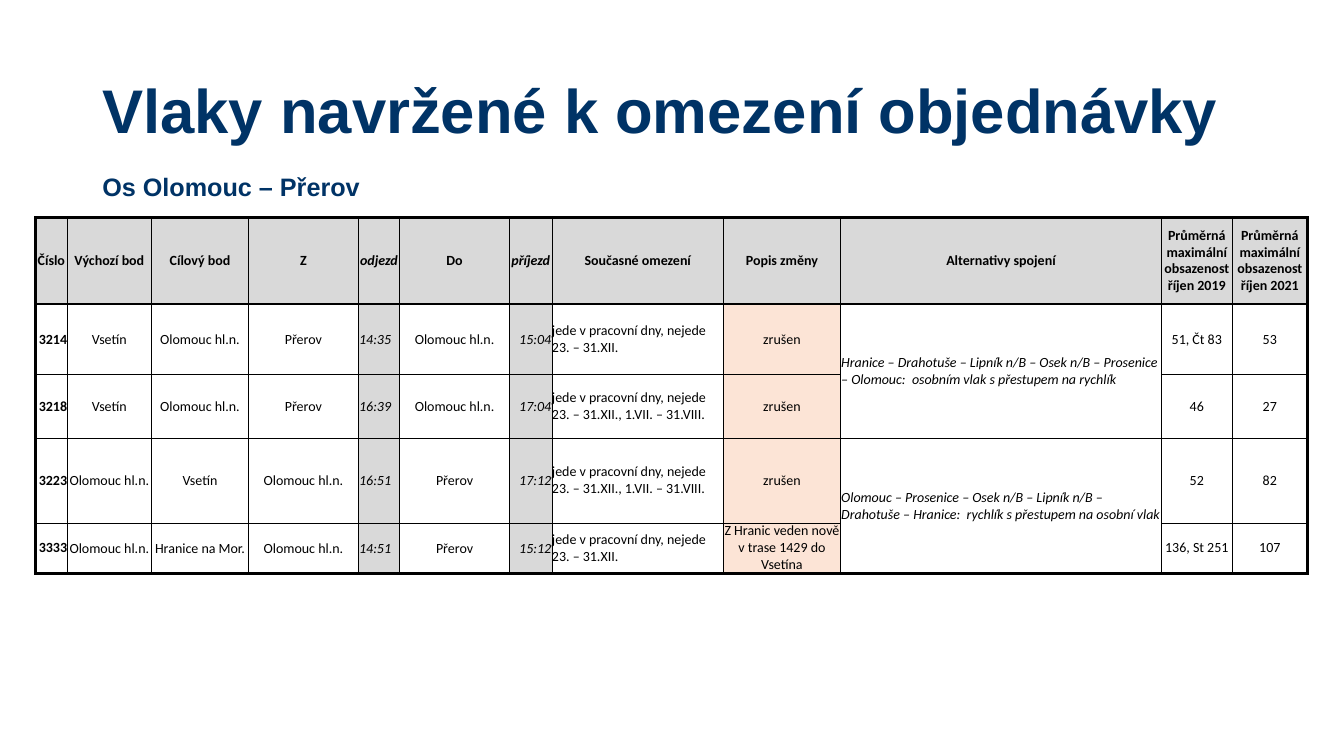
"""Slide listing the trains proposed for a reduced order."""
from lxml.etree import SubElement
from pptx import Presentation
from pptx.dml.color import RGBColor
from pptx.enum.text import MSO_ANCHOR, PP_ALIGN
from pptx.oxml.ns import qn
from pptx.util import Cm, Pt

COLORS = {"navy": "003366", "black": "000000", "grey": "D9D9D9", "peach": "FCE4D6"}
THIN, THICK = 0.25, 2.25
LEFT, CENTER, RIGHT = PP_ALIGN.LEFT, PP_ALIGN.CENTER, PP_ALIGN.RIGHT

HEADINGS = [
    "Číslo", "Výchozí bod", "Cílový bod", "Z", "odjezd", "Do", "příjezd",
    "Současné omezení", "Popis změny", "Alternativy spojení",
    "Průměrná maximální obsazenost říjen 2019",
    "Průměrná maximální obsazenost říjen 2021",
]
WINTER = "jede v pracovní dny, nejede 23. – 31.XII."
WINTER_SUMMER = WINTER + ", 1.VII. – 31.VIII."
TO_OLOMOUC = ("Hranice – Drahotuše – Lipník n/B – Osek n/B – Prosenice – Olomouc:"
              "  osobním vlak s přestupem na rychlík")
FROM_OLOMOUC = ("Olomouc – Prosenice – Osek n/B – Lipník n/B – Drahotuše – Hranice:"
                "  rychlík s přestupem na osobní vlak")
TRAINS = [
    ["3214", "Vsetín", "Olomouc hl.n.", "Přerov", "14:35", "Olomouc hl.n.", "15:04",
     WINTER, "zrušen", TO_OLOMOUC, "51, Čt 83", "53"],
    ["3218", "Vsetín", "Olomouc hl.n.", "Přerov", "16:39", "Olomouc hl.n.", "17:04",
     WINTER_SUMMER, "zrušen", "", "46", "27"],
    ["3223", "Olomouc hl.n.", "Vsetín", "Olomouc hl.n.", "16:51", "Přerov", "17:12",
     WINTER_SUMMER, "zrušen", FROM_OLOMOUC, "52", "82"],
    ["3333", "Olomouc hl.n.", "Hranice na Mor.", "Olomouc hl.n.", "14:51", "Přerov", "15:12",
     WINTER, "Z Hranic veden nově v trase 1429 do Vsetína", "", "136, St 251", "107"],
]
COLUMN_WIDTHS = [0.79, 2.13, 2.44, 2.77, 1.04, 2.77, 1.07, 4.32, 2.95, 8.09, 1.78, 1.9]
ROW_HEIGHTS = [2.18, 1.78, 1.61, 2.12, 1.26]
NUMBER, DEPARTURE, ARRIVAL, LIMITS, CHANGE, ALTERNATIVES = 0, 4, 6, 7, 8, 9
TIMES = (DEPARTURE, ARRIVAL)
ALIGNMENTS = {NUMBER: RIGHT, DEPARTURE: LEFT, ARRIVAL: RIGHT, LIMITS: LEFT, ALTERNATIVES: LEFT}
BODY_FILLS = {DEPARTURE: "grey", ARRIVAL: "grey", CHANGE: "peach"}
INSET_COLUMNS = (*range(1, 7), ALTERNATIVES)


def write_text(frame, text, size=10, font="Calibri", color="black", bold=False,
               italic=False, align=LEFT, spacing=None):
    paragraph = frame.paragraphs[0]
    paragraph.alignment = align
    paragraph.line_spacing = spacing
    run = paragraph.add_run()
    run.text = text
    run.font.size = Pt(size)
    run.font.name = font
    run.font.bold = bold
    run.font.italic = italic
    run.font.color.rgb = RGBColor.from_string(COLORS[color])


class TimetableSlide:
    def __init__(self, deck):
        self.slide = deck.slides.add_slide(deck.slide_layouts[6])
        self.heading_style = {"font": "Arial", "color": "navy", "bold": True}

    def heading(self, text, left, top, width, height, anchor=MSO_ANCHOR.TOP, **style):
        box = self.slide.shapes.add_textbox(Cm(left), Cm(top), Cm(width), Cm(height))
        box.text_frame.word_wrap = True
        box.text_frame.vertical_anchor = anchor
        write_text(box.text_frame, text, **self.heading_style, **style)

    def borders(self, cell, widths):
        properties = cell._tc.get_or_add_tcPr()
        for side, width in zip("LRTB", widths):
            line = SubElement(properties, qn(f"a:ln{side}"), w=str(Pt(width)))
            fill = SubElement(line, qn("a:solidFill"))
            SubElement(fill, qn("a:srgbClr"), val=COLORS["black"])

    def cell(self, cell, text, row, column):
        header = row == 0
        last_row = row + (cell.span_height if cell.is_merge_origin else 1) == len(ROW_HEIGHTS)
        thick_sides = (column == 0, column == len(HEADINGS) - 1, row <= 1, header or last_row)
        self.borders(cell, [THICK if thick else THIN for thick in thick_sides])
        side = 0 if header or column not in INSET_COLUMNS else 0.02
        cell.margin_left = cell.margin_right = cell.margin_top = Cm(side)
        cell.margin_bottom = 0
        cell.vertical_anchor = MSO_ANCHOR.MIDDLE
        fill = "grey" if header else BODY_FILLS.get(column)
        if fill:
            cell.fill.solid()
            cell.fill.fore_color.rgb = RGBColor.from_string(COLORS[fill])
        else:
            cell.fill.background()
        if text:
            write_text(cell.text_frame, text, bold=header or column == NUMBER,
                       italic=column in TIMES or (column == ALTERNATIVES and not header),
                       align=CENTER if header else ALIGNMENTS.get(column, CENTER))

    def timetable(self, rows, left, top):
        table = self.slide.shapes.add_table(
            len(rows), len(HEADINGS), Cm(left), Cm(top),
            Cm(sum(COLUMN_WIDTHS)), Cm(sum(ROW_HEIGHTS))).table
        table.first_row = table.horz_banding = False
        for column, width in zip(table.columns, COLUMN_WIDTHS):
            column.width = Cm(width)
        for row, height in zip(table.rows, ROW_HEIGHTS):
            row.height = Cm(height)
        for first in (1, 3):
            table.cell(first, ALTERNATIVES).merge(table.cell(first + 1, ALTERNATIVES))
        for row, texts in enumerate(rows):
            for column, text in enumerate(texts):
                self.cell(table.cell(row, column), text, row, column)


def main():
    deck = Presentation()
    deck.slide_width, deck.slide_height = Cm(33.87), Cm(19.05)
    page = TimetableSlide(deck)
    page.heading("Vlaky navržené k omezení objednávky", 2.33, 1.01, 29.21, 3.68,
                 anchor=MSO_ANCHOR.MIDDLE, size=44, spacing=0.9)
    page.heading("Os Olomouc – Přerov", 2.33, 4.2, 16.93, 1.03, size=18)
    page.timetable([HEADINGS, *TRAINS], 0.9, 5.48)
    deck.save("out.pptx")


if __name__ == "__main__":
    main()
